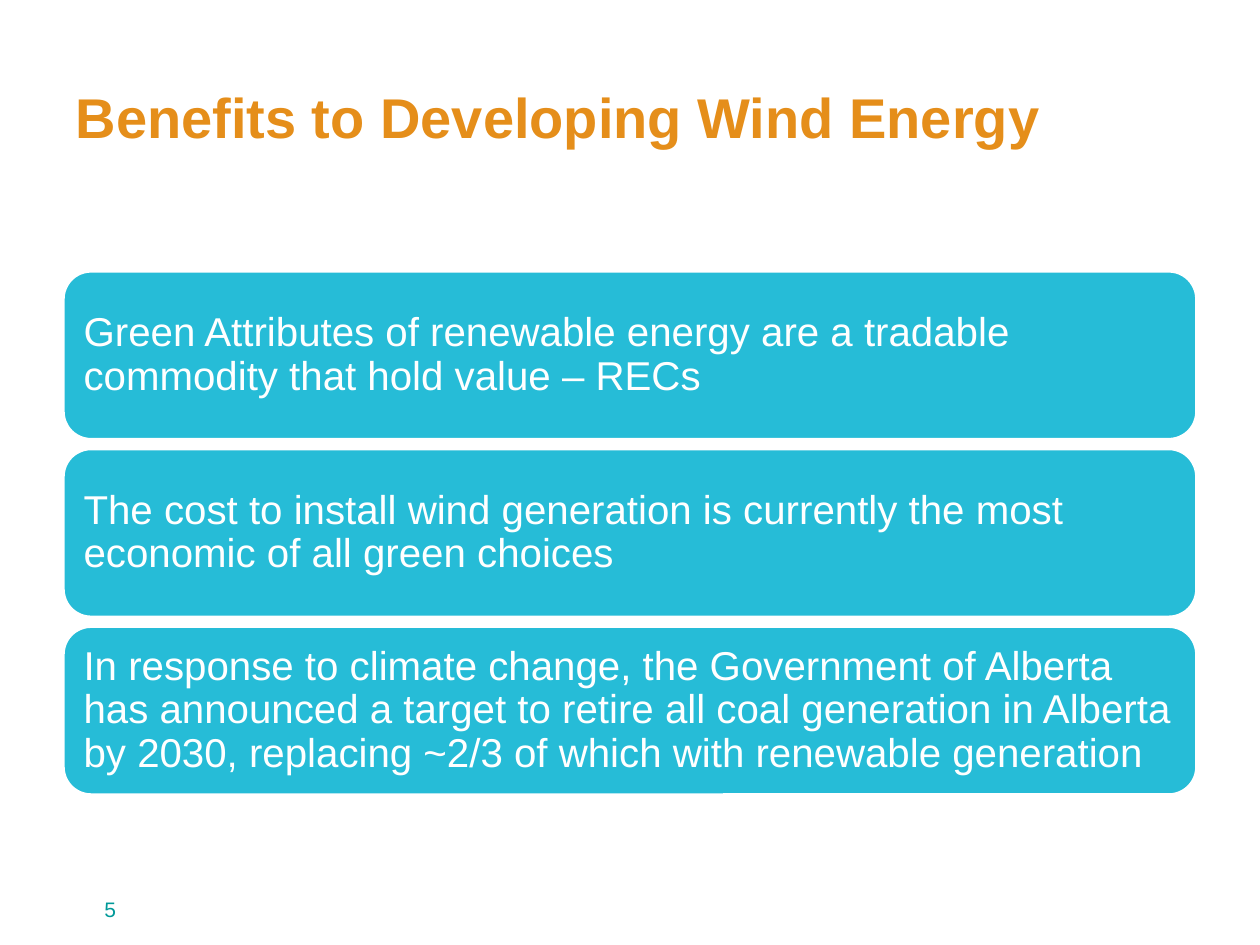
from pptx import Presentation
from pptx.dml.color import RGBColor
from pptx.enum.shapes import MSO_SHAPE
from pptx.enum.text import MSO_ANCHOR, PP_ALIGN
from pptx.util import Inches, Pt


def color(code):
    return RGBColor.from_string(code)


def write(frame, text, size, code, **extra):
    frame.word_wrap = True
    frame.text = text
    para = frame.paragraphs[0]
    para.alignment = PP_ALIGN.LEFT
    font = para.runs[0].font
    font.color.rgb = color(code)
    look = {"name": "Arial", "size": Pt(size), **extra}
    for key, value in look.items():
        setattr(font, key, value)
    return para


deck = Presentation()
deck.slide_width, deck.slide_height = Inches(10), Inches(7.5)
slide = deck.slides.add_slide(deck.slide_layouts[5])

number = slide.shapes.add_textbox(Inches(0.73), Inches(7.07), Inches(2.33), Inches(0.4))
write(number.text_frame, "5", 12, "009999")

title = slide.shapes.title
place = {"left": 0.5, "top": 0.3, "width": 9, "height": 1.25}
for key, value in place.items():
    setattr(title, key, Inches(value))
title.text_frame.vertical_anchor = MSO_ANCHOR.MIDDLE
write(title.text_frame, "Benefits to Developing Wind Energy", 32, "E58E1A", bold=True)

points = [
    "Green Attributes of renewable energy are a tradable commodity that hold value – RECs",
    "The cost to install wind generation is currently the most economic of all green choices",
    "In response to climate change, the Government of Alberta has announced a target to retire "
    "all coal generation in Alberta by 2030, replacing ~2/3 of which with renewable generation",
]
top, height, step = 2.15, 1.34, 1.41
inset = Inches(0.1)
layout = {
    "margin_left": inset,
    "margin_right": inset,
    "margin_top": inset,
    "margin_bottom": inset,
    "vertical_anchor": MSO_ANCHOR.MIDDLE,
}

for row, point in enumerate(points):
    card = slide.shapes.add_shape(
        MSO_SHAPE.ROUNDED_RECTANGLE,
        Inches(0.5), Inches(top + row * step), Inches(9), Inches(height),
    )
    card.shadow.inherit = False
    card.fill.solid()
    card.fill.fore_color.rgb = color("26BCD7")
    card.line.color.rgb = color("FFFFFF")
    card.line.width = Pt(2)
    for key, value in layout.items():
        setattr(card.text_frame, key, value)
    para = write(card.text_frame, point, 23, "FFFFFF")
    para.line_spacing = 0.9

deck.save("out.pptx")
